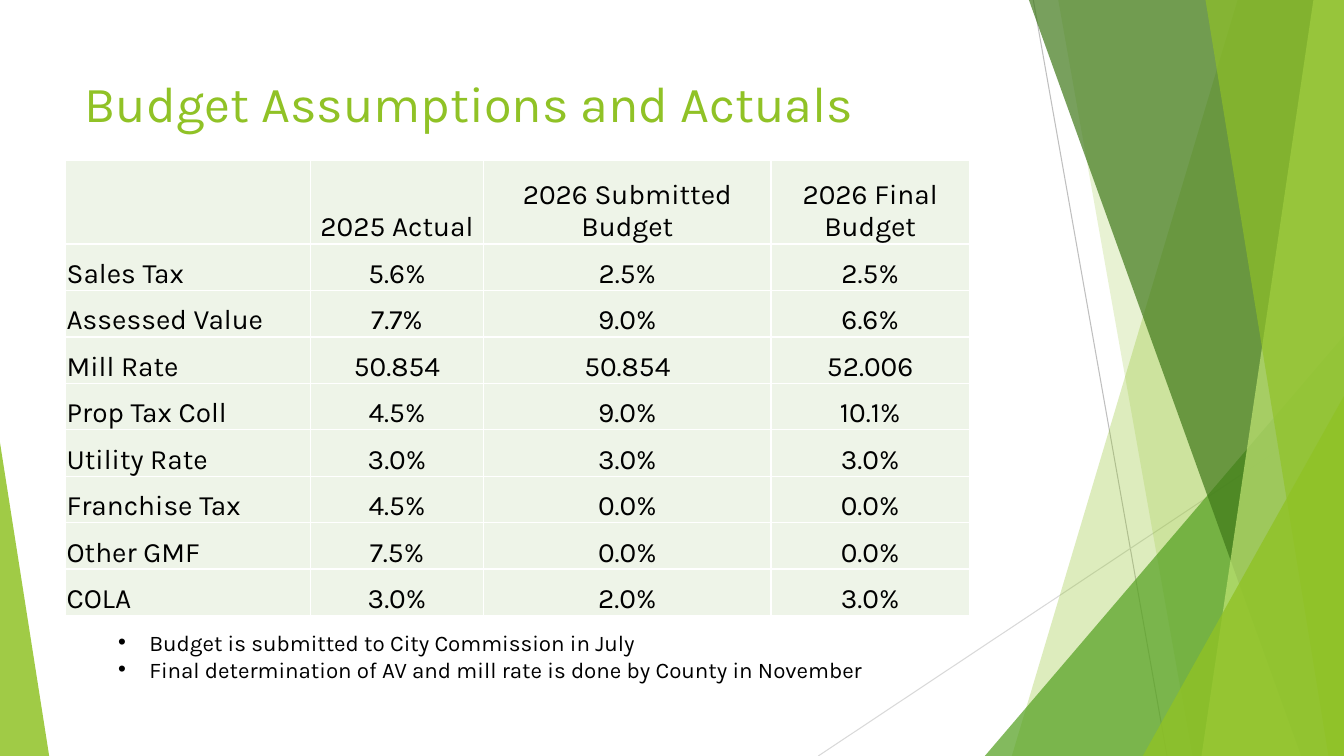
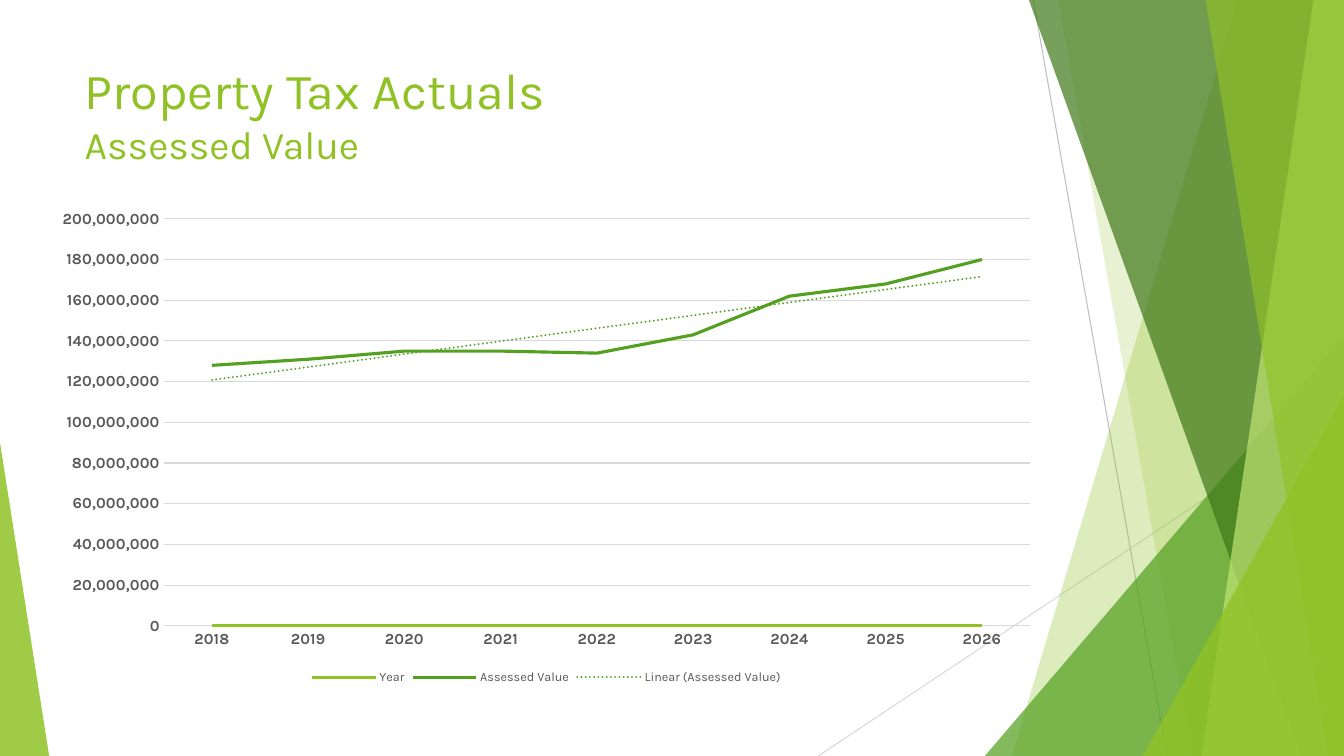
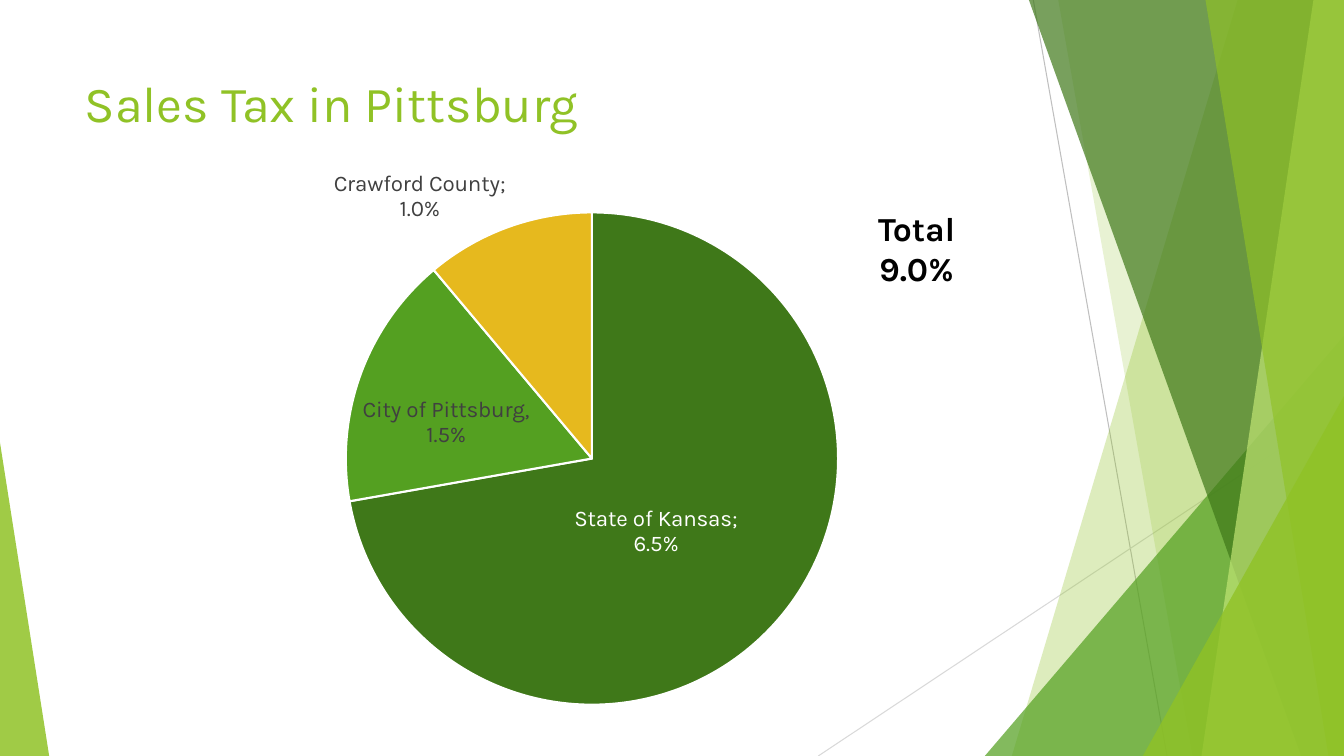
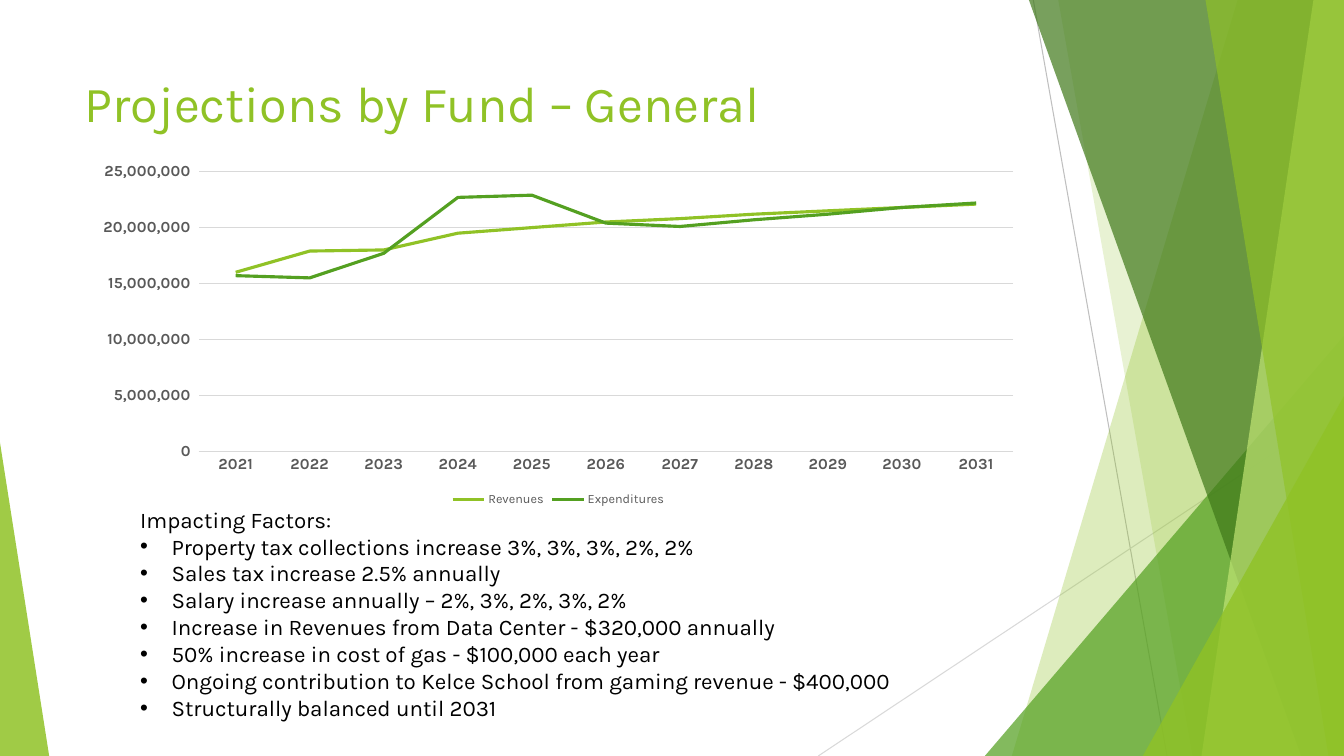
"""Builds four city budget slides with a table, two line charts and a pie chart."""
from lxml import etree
from pptx import Presentation
from pptx import util as u
from pptx.chart import data as cd
from pptx.dml.color import RGBColor
from pptx.enum import chart as ce
from pptx.enum import shapes, text
from pptx.oxml.ns import qn

FONT = "Karla"
COLORS = {
    "lime": "90C226", "green": "54A021", "forest": "3F7819", "pale": "C0E474",
    "gold": "E6B91E", "cell": "EEF4E8", "white": "FFFFFF", "black": "000000",
    "label": "404040", "axis": "595959", "grid": "D9D9D9", "gray": "BFBFBF",
}
WIDTH, HEIGHT = 33.87, 19.05
TITLE_TOP = 1.7
LINES = [((26.04, 0), (29.41, HEIGHT), "gray"),
         ((WIDTH, 10.24), (20.62, HEIGHT), "grid")]
# top x, bottom x, colour, opacity; a triangle has left, top, width, apex
BANDS = [
    ("band", (31.19, 25.5), "lime", 30),
    ("band", (26.67, 30.05), "lime", 20),
    ("triangle", (24.82, 8.46, 9.05, 1), "green", 72),
    ("band", (25.93, 32.79), "forest", 70),
    ("band", (33.1, 30.28), "pale", 70),
    ("band", (30.38, 33.48), "lime", 65),
    ("triangle", (28.8, 9.98, 5.07, 1), "lime", 80),
    ("triangle", (0, 11.15, 1.24, 0), "lime", 85),
]


def rgb(name):
    """Return a palette colour."""
    return RGBColor.from_string(COLORS[name])


def box(*lengths):
    """Convert centimetres to lengths."""
    return [u.Cm(n) for n in lengths]


def add_xml(parent, tag, **attrs):
    """Append an XML element and return it."""
    return etree.SubElement(parent, qn(tag), {k: str(v) for k, v in attrs.items()})


def style_font(font, size, color, bold=False):
    """Set typeface, size, colour and weight."""
    font.name, font.size, font.bold = FONT, u.Pt(size), bold
    font.color.rgb = rgb(color)


def style_runs(tf, size, color, bold=False):
    """Format every run of a text frame."""
    for p in tf.paragraphs:
        for r in p.runs:
            style_font(r.font, size, color, bold)


def style_line(line, color, width):
    """Set line colour and width."""
    line.color.rgb = rgb(color)
    line.width = u.Pt(width)


def add_band(group, kind, geometry, color, opacity):
    """Add one translucent band or triangle."""
    if kind == "band":
        top, bottom = geometry
        points = [box(x, y) for x, y in ((WIDTH, 0), (WIDTH, HEIGHT), (bottom, HEIGHT))]
        builder = group.shapes.build_freeform(u.Cm(top), 0, scale=1.0)
        sp = builder.add_line_segments(points).convert_to_shape()
    else:
        left, top, width, apex = geometry
        sp = group.shapes.add_shape(shapes.MSO_SHAPE.ISOSCELES_TRIANGLE,
                                    *box(left, top, width, HEIGHT - top))
        sp.adjustments[0] = apex
    sp.shadow.inherit = False
    sp.fill.solid()
    sp.fill.fore_color.rgb = rgb(color)
    sp.line.fill.background()
    add_xml(sp.element.spPr.find(".//" + qn("a:srgbClr")), "a:alpha", val=opacity * 1000)


def add_backdrop(prs, s):
    """Draw the facets once and move them to the slide master."""
    group = s.shapes.add_group_shape()
    for start, end, color in LINES:
        line = group.shapes.add_connector(shapes.MSO_CONNECTOR.STRAIGHT, *box(*start, *end))
        style_line(line.line, color, 0.75)
        add_xml(line.element.spPr, "a:effectLst")
    for band in BANDS:
        add_band(group, *band)
    for props in group.element.iter(qn("p:cNvPr")):
        props.set("id", str(int(props.get("id")) + 100))
    prs.slide_master.shapes.element.insert(2, group.element)


def add_slide(prs, title, layout=5, top=TITLE_TOP):
    """Add a slide with a styled title."""
    s = prs.slides.add_slide(prs.slide_layouts[layout])
    sp = s.shapes.title
    sp.left, sp.top, sp.width, sp.height = box(1.88, top, 23.88, 3.66)
    tf = sp.text_frame
    tf.text = title
    tf.auto_size = text.MSO_AUTO_SIZE.NONE
    tf.vertical_anchor = text.MSO_ANCHOR.TOP
    tf.paragraphs[0].alignment = text.PP_ALIGN.LEFT
    style_runs(tf, 36, "lime")
    return s


def add_list(s, place, items, heading=None):
    """Fill the body placeholder with bullets under an optional heading."""
    sp = s.placeholders[1]
    sp.left, sp.top, sp.width, sp.height = box(*place)
    tf = sp.text_frame
    tf.text = "\n".join(([heading] if heading else []) + items)
    tf.auto_size = text.MSO_AUTO_SIZE.NONE
    for p in tf.paragraphs:
        pPr = p._p.get_or_add_pPr()
        indent = 0 if p.text == heading else u.Cm(0.79)
        pPr.set("marL", str(indent))
        pPr.set("indent", str(-indent))
        if indent:
            add_xml(pPr, "a:buFont", typeface="Arial")
            add_xml(pPr, "a:buChar", char="•")
        else:
            add_xml(pPr, "a:buNone")
        p.space_before = u.Pt(0)
    style_runs(tf, 16, "black")


def style_cell(cell, value, align):
    """Write and format one table cell."""
    cell.text = value
    cell.vertical_anchor = text.MSO_ANCHOR.BOTTOM
    cell.margin_left = cell.margin_right = cell.margin_top = u.Cm(0.03)
    cell.margin_bottom = 0
    for p in cell.text_frame.paragraphs:
        p.alignment = align
    style_runs(cell.text_frame, 20, "black")
    tcPr = cell._tc.get_or_add_tcPr()
    for side in ("a:lnL", "a:lnR", "a:lnT", "a:lnB"):
        fill = add_xml(add_xml(tcPr, side, w=u.Pt(1)), "a:solidFill")
        add_xml(fill, "a:srgbClr", val=COLORS["white"])
    cell.fill.solid()
    cell.fill.fore_color.rgb = rgb("cell")


def add_table(s, left, top, widths, heights, rows):
    """Add a table with labels at left and centred values."""
    frame = s.shapes.add_table(len(rows), len(widths),
                               *box(left, top, sum(widths), sum(heights)))
    table = frame.table
    table.first_row = table.horz_banding = False
    for column, width in zip(table.columns, widths):
        column.width = u.Cm(width)
    for row, height in zip(table.rows, heights):
        row.height = u.Cm(height)
    for i, row in enumerate(rows):
        for j, value in enumerate(row):
            align = text.PP_ALIGN.CENTER if j else text.PP_ALIGN.LEFT
            style_cell(table.cell(i, j), value, align)


def add_chart(s, kind, place, categories, series, number_format):
    """Add a chart without title and return it."""
    data = cd.CategoryChartData(number_format=number_format)
    data.categories = categories
    for name, values in series.items():
        data.add_series(name, values)
    chart = s.shapes.add_chart(kind, *box(*place), data).chart
    chart.has_title = False
    chart.has_legend = False
    style_font(chart.font, 10, "black")
    return chart


def add_line_chart(s, place, years, series, number_format="#,##0"):
    """Add a line chart in millions with a bottom legend."""
    values = {name: [round(v * 1000000) for v in vals] for name, vals in series.items()}
    chart = add_chart(s, ce.XL_CHART_TYPE.LINE, place, [str(y) for y in years],
                      values, number_format)
    chart.has_legend = True
    chart.legend.position = ce.XL_LEGEND_POSITION.BOTTOM
    chart.legend.include_in_layout = False
    style_font(chart.legend.font, 9, "axis")
    for axis in (chart.category_axis, chart.value_axis):
        axis.major_tick_mark = axis.minor_tick_mark = ce.XL_TICK_MARK.NONE
        style_font(axis.tick_labels.font, 11, "axis", True)
    style_line(chart.category_axis.format.line, "grid", 0.75)
    axis = chart.value_axis
    axis.format.line.fill.background()
    style_line(axis.major_gridlines.format.line, "grid", 0.75)
    axis.tick_labels.number_format = number_format
    axis.tick_labels.number_format_is_linked = False
    for ser, color in zip(chart.plots[0].series, ("lime", "green")):
        ser.smooth = False
        ser.marker.style = ce.XL_MARKER_STYLE.NONE
        style_line(ser.format.line, color, 2.25)
    return chart


def add_trend(chart, index, color):
    """Add a dotted linear trend line to a series."""
    ser = chart.element.xpath(".//c:ser")[index]
    trend = add_xml(ser, "c:trendline")
    line = add_xml(add_xml(trend, "c:spPr"), "a:ln", w=u.Pt(1.5), cap="rnd")
    add_xml(add_xml(line, "a:solidFill"), "a:srgbClr", val=COLORS[color])
    add_xml(line, "a:prstDash", val="sysDot")
    add_xml(trend, "c:trendlineType", val="linear")
    add_xml(trend, "c:dispRSqr", val=0)
    add_xml(trend, "c:dispEq", val=0)
    ser.find(qn("c:cat")).addprevious(trend)


def fill_layout(layout, **values):
    """Write a manual chart layout."""
    manual = add_xml(layout, "c:manualLayout")
    for name, value in values.items():
        add_xml(manual, "c:" + name, val=value)


def add_pie(s, place, shares, colors):
    """Add a pie chart with category and value labels."""
    chart = add_chart(s, ce.XL_CHART_TYPE.PIE, place, list(shares),
                      {"Series 1": list(shares.values())}, "0.0%")
    plot_area = chart.element.xpath(".//c:plotArea")[0]
    for old in plot_area.findall(qn("c:layout")):
        plot_area.remove(old)
    layout = add_xml(plot_area, "c:layout")
    plot_area.insert(0, layout)
    fill_layout(layout, layoutTarget="inner", xMode="edge", yMode="edge",
                x=0.27, y=0.11, w=0.49, h=0.85)
    chart.plots[0].vary_by_categories = True
    ser = chart.plots[0].series[0]
    labels = ser.data_labels
    labels.show_value = labels.show_category_name = True
    labels.show_percentage = labels.show_legend_key = False
    labels.number_format, labels.number_format_is_linked = "0.0%", False
    labels.position = ce.XL_LABEL_POSITION.BEST_FIT
    style_font(labels.font, 16, "label")
    for i, color in enumerate(colors):
        fmt = ser.points[i].format
        fmt.fill.solid()
        fmt.fill.fore_color.rgb = rgb(color)
        style_line(fmt.line, "white", 1.5)
    state, city = (ser.points[i].data_label for i in (0, 1))
    style_font(state.font, 16, "white")
    city.text_frame.text = "City of Pittsburg, 1.5%"
    style_runs(city.text_frame, 16, "label")
    for label in (state, city):
        label.position = ce.XL_LABEL_POSITION.CENTER
    for label, y in zip(chart.element.xpath(".//c:dLbl"), (-0.01, 0.01)):
        label.find(qn("c:showCatName")).set("val", "1")
        layout = add_xml(label, "c:layout")
        label.insert(1, layout)
        fill_layout(layout, x=-0.03, y=y)


def add_total(s, place, value):
    """Add a bold centred total."""
    tf = s.shapes.add_textbox(*box(*place)).text_frame
    tf.word_wrap = False
    tf.text = value
    for p in tf.paragraphs:
        p.alignment = text.PP_ALIGN.CENTER
    style_runs(tf, 24, "black", True)


def main():
    """Build and save the presentation."""
    prs = Presentation()
    prs.slide_width, prs.slide_height = box(WIDTH, HEIGHT)

    s = add_slide(prs, "Budget Assumptions and Actuals", layout=1)
    add_backdrop(prs, s)
    add_table(s, 1.65, 4.04, [6.17, 4.37, 7.24, 5], [2.11] + [1.17] * 8, [
        ("", "2025 Actual", "2026 Submitted\nBudget", "2026 Final Budget"),
        ("Sales Tax", "5.6%", "2.5%", "2.5%"),
        ("Assessed Value", "7.7%", "9.0%", "6.6%"),
        ("Mill Rate", "50.854", "50.854", "52.006"),
        ("Prop Tax Coll", "4.5%", "9.0%", "10.1%"),
        ("Utility Rate", "3.0%", "3.0%", "3.0%"),
        ("Franchise Tax", "4.5%", "0.0%", "0.0%"),
        ("Other GMF", "7.5%", "0.0%", "0.0%"),
        ("COLA", "3.0%", "2.0%", "3.0%"),
    ])
    add_list(s, (2.72, 15.72, 20.62, 1.63), [
        "Budget is submitted to City Commission in July",
        "Final determination of AV and mill rate is done by County in November",
    ])

    s = add_slide(prs, "Property Tax Actuals\vAssessed Value", top=1.37)
    s.shapes.title.text_frame.paragraphs[0].runs[1].font.size = u.Pt(28)
    chart = add_line_chart(s, (1.07, 5.03, 25.4, 12.32), range(2018, 2027), {
        "Year": [0] * 9,
        "Assessed Value": [128, 131, 135, 135, 134, 143, 162, 168, 180],
    })
    add_trend(chart, 1, "green")

    s = add_slide(prs, "Sales Tax in Pittsburg")
    add_pie(s, (1.88, 3.73, 25.32, 14.63),
            {"State of Kansas": 0.065, "City of Pittswburg": 0.015, "Crawford County": 0.01},
            ("forest", "green", "gold"))
    add_total(s, (21.87, 5.11, 2.46, 2.31), "Total\n9.0%")

    s = add_slide(prs, "Projections by Fund – General", layout=1)
    add_list(s, (3.28, 12.62, 20.62, 6.4), [
        "Property tax collections increase 3%, 3%, 3%, 2%, 2%",
        "Sales tax increase 2.5% annually",
        "Salary increase annually – 2%, 3%, 2%, 3%, 2%",
        "Increase in Revenues from Data Center - $320,000 annually",
        "50% increase in cost of gas - $100,000 each year",
        "Ongoing contribution to Kelce School from gaming revenue - $400,000",
        "Structurally balanced until 2031",
    ], heading="Impacting Factors:")
    add_line_chart(s, (2.13, 3.91, 23.88, 8.97), range(2021, 2032), {
        "Revenues": [16, 17.9, 18, 19.5, 20, 20.5, 20.8, 21.2, 21.5, 21.8, 22.1],
        "Expenditures": [15.7, 15.5, 17.7, 22.7, 22.9, 20.4, 20.1, 20.7, 21.2, 21.8, 22.2],
    }, number_format="#,##0_);[Red]\\(#,##0\\)")

    prs.save("out.pptx")


if __name__ == "__main__":
    main()
